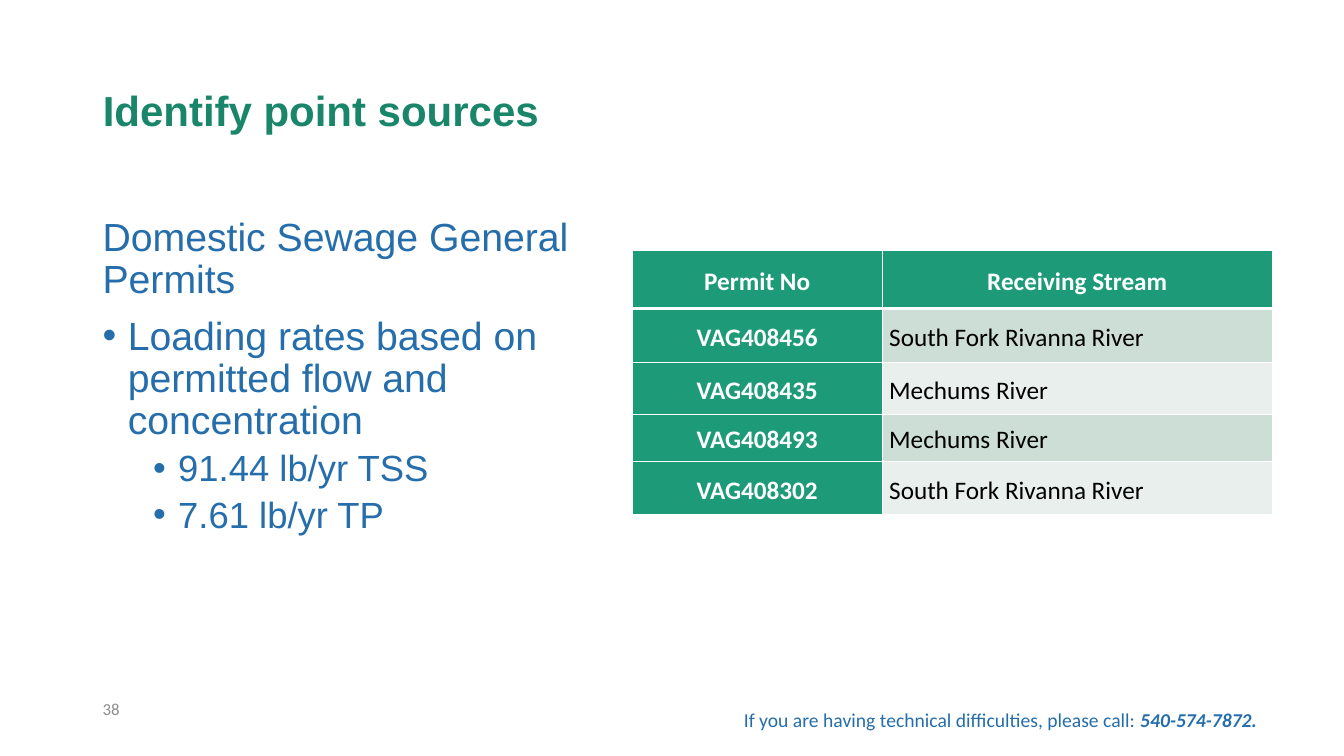
from lxml.etree import SubElement
from pptx import Presentation
from pptx.dml.color import RGBColor
from pptx.enum.text import MSO_ANCHOR as Anchor, PP_ALIGN as Align
from pptx.oxml.ns import qn
from pptx.util import Emu, Inches, Pt

SLIDE_W, SLIDE_H = Inches(13.33), Inches(7.5)
GREEN = RGBColor(0x19, 0x85, 0x69)
TABLE_GREEN = RGBColor(0x1D, 0x9A, 0x78)
BANDS = RGBColor(0xCD, 0xDE, 0xD6), RGBColor(0xE8, 0xEF, 0xEC)
BLUE = RGBColor(0x25, 0x6E, 0xAB)
GRAY = RGBColor(0x8C, 0x8C, 0x8C)
WHITE = RGBColor(0xFF, 0xFF, 0xFF)
BLACK = RGBColor(0, 0, 0)

MARGIN, FULL = 6.9, 86.27  # percent of the slide width
COL_SHARES = 18.6, 29.04
ROW_SHARES = 7.73, 7.2, 6.8, 6.27, 7.07
PERMITS = [
    ("Permit No", "Receiving Stream"),
    ("VAG408456", "South Fork Rivanna River"),
    ("VAG408435", "Mechums River"),
    ("VAG408493", "Mechums River"),
    ("VAG408302", "South Fork Rivanna River"),
]
# text, size, level, left indent in inches, space before
BODY = [
    ("Domestic Sewage General Permits", 28, 0, 0, 0),
    ("Loading rates based on permitted flow and concentration", 28, 0, 0.25, 10),
    ("91.44 lb/yr TSS", 26, 1, 0.75, 5),
    ("7.61 lb/yr TP", 26, 1, 0.75, 5),
]


def across(percent):
    return Emu(int(SLIDE_W * percent / 100))


def down(percent):
    return Emu(int(SLIDE_H * percent / 100))


def box(x, y, w, h):
    """Turn percentages of the slide into left, top, width, height."""
    return across(x), down(y), across(w), down(h)


def apply(obj, **formats):
    for name, value in formats.items():
        setattr(obj, name, value)


def add_run(p, text, size, color, name="Calibri", **formats):
    r = p.add_run()
    r.text = text
    apply(r.font, size=Pt(size), name=name, **formats)
    r.font.color.rgb = color


def add_text_frame(s, x, y, w, h):
    tf = s.shapes.add_textbox(*box(x, y, w, h)).text_frame
    tf.word_wrap = True
    return tf


def set_bullet(p, indent):
    pPr = p._p.get_or_add_pPr()
    pPr.set("marL", str(Inches(indent)))
    pPr.set("indent", str(-Inches(0.25)))
    SubElement(pPr, qn("a:buFont"), typeface="Arial")
    SubElement(pPr, qn("a:buChar"), char="•")


def set_borders(cell, widths):
    """Draw white borders; widths maps a side (L, R, T, B) to points."""
    tcPr = cell._tc.get_or_add_tcPr()
    for i, (side, width) in enumerate(widths.items()):
        ln = SubElement(tcPr, qn(f"a:ln{side}"), w=str(Pt(width)))
        fill = SubElement(ln, qn("a:solidFill"))
        SubElement(fill, qn("a:srgbClr"), val=str(WHITE))
        tcPr.insert(i, ln)


def add_title(s, text):
    title = s.shapes.title
    places = zip(("left", "top", "width", "height"), box(MARGIN, 5.33, FULL, 19.33))
    apply(title, **dict(places))
    apply(title.text_frame, vertical_anchor=Anchor.MIDDLE, word_wrap=True)
    p = title.text_frame.paragraphs[0]
    apply(p, alignment=Align.LEFT, line_spacing=0.9)
    add_run(p, text, 30, GREEN, "Arial", bold=True)


def add_body(s):
    tf = add_text_frame(s, MARGIN, 28.13, 43.14, 56.53)
    for i, (text, size, level, indent, before) in enumerate(BODY):
        p = tf.add_paragraph() if i else tf.paragraphs[0]
        apply(p, level=level, line_spacing=0.9, space_before=Pt(before))
        if indent:
            set_bullet(p, indent)
        add_run(p, text, size, BLUE, "Arial")


def fill_cell(cell, text, row, is_key):
    """Write one cell; key cells are the header row and the permit column."""
    apply(cell, vertical_anchor=Anchor.MIDDLE, margin_left=Inches(0.07),
          margin_right=Inches(0.07), margin_top=0, margin_bottom=0)
    cell.fill.solid()
    cell.fill.fore_color.rgb = TABLE_GREEN if is_key else BANDS[(row - 1) % 2]
    set_borders(cell, {"L": 1, "R": 1, "T": 3 if row == 1 else 1, "B": 1 if row else 3})
    p = cell.text_frame.paragraphs[0]
    apply(p, alignment=Align.CENTER if is_key else Align.LEFT, line_spacing=1.15)
    add_run(p, text, 18, WHITE if is_key else BLACK, bold=is_key)


def add_permit_table(s):
    place = box(47.04, 33.07, sum(COL_SHARES), sum(ROW_SHARES))
    table = s.shapes.add_table(len(PERMITS), len(COL_SHARES), *place).table
    for column, share in zip(table.columns, COL_SHARES):
        column.width = across(share)
    for i, (row, share) in enumerate(zip(table.rows, ROW_SHARES)):
        row.height = down(share)
        for j, text in enumerate(PERMITS[i]):
            fill_cell(table.cell(i, j), text, i, i == 0 or j == 0)


def add_footer(s):
    tf = add_text_frame(s, MARGIN, 92, FULL, 6)
    tf.margin_top = Inches(0.03)
    add_run(tf.paragraphs[0], "38", 12, GRAY)
    p = add_text_frame(s, 54.61, 92.93, 39.76, 4.53).paragraphs[0]
    add_run(p, "If you are having technical difficulties, please call: ", 14, BLUE)
    add_run(p, "540-574-7872.", 14, BLUE, bold=True, italic=True)


def main():
    prs = Presentation()
    apply(prs, slide_width=SLIDE_W, slide_height=SLIDE_H)
    s = prs.slides.add_slide(prs.slide_layouts[5])
    add_title(s, "Identify point sources")
    add_body(s)
    add_permit_table(s)
    add_footer(s)
    prs.save("out.pptx")


if __name__ == "__main__":
    main()
